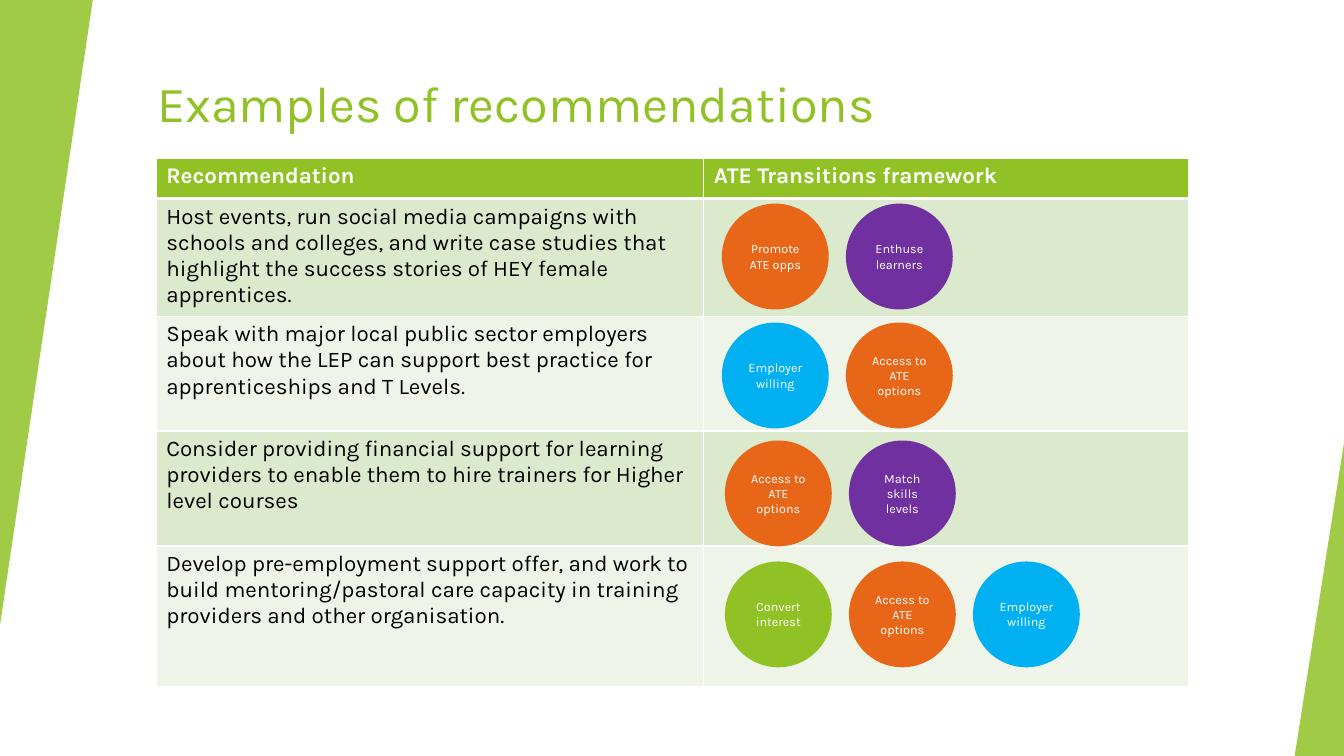
"""Build the slide of example recommendations mapped to the ATE Transitions framework."""
from pptx import Presentation
from pptx.dml.color import RGBColor
from pptx.enum import shapes, text
from pptx.oxml import parse_xml
from pptx.oxml.ns import nsdecls
from pptx.util import Inches, Pt

GREEN = RGBColor(0x90, 0xC2, 0x26)
ORANGE = RGBColor(0xE7, 0x66, 0x18)
PURPLE = RGBColor(0x70, 0x30, 0xA0)
BLUE = RGBColor(0x00, 0xB0, 0xF0)
WHITE = RGBColor(0xFF, 0xFF, 0xFF)
BLACK = RGBColor(0x00, 0x00, 0x00)
BANDS = [RGBColor(0xDB, 0xE9, 0xCD), RGBColor(0xEE, 0xF4, 0xE8)]

PROMOTE = ("Promote ATE opps", ORANGE)
ENTHUSE = ("Enthuse learners", PURPLE)
WILLING = ("Employer willing", BLUE)
ACCESS = ("Access to ATE options", ORANGE)
MATCH = ("Match skills levels", PURPLE)
CONVERT = ("Convert interest", GREEN)

headings = ["Recommendation", "ATE Transitions framework"]
recommendations = [
    ("Host events, run social media campaigns with schools and colleges, and write case studies "
     "that highlight the success stories of HEY female apprentices.",
     1.14, 7.16, 2.02, [PROMOTE, ENTHUSE]),
    ("Speak with major local public sector employers about how the LEP can support best practice "
     "for apprenticeships and T Levels.",
     1.14, 7.16, 3.2, [WILLING, ACCESS]),
    ("Consider providing financial support for learning providers to enable them to hire trainers "
     "for Higher level courses",
     1.14, 7.19, 4.37, [ACCESS, MATCH]),
    ("Develop pre-employment support offer, and work to build mentoring/pastoral care capacity in "
     "training providers and other organisation.",
     1.4, 7.19, 5.57, [CONVERT, ACCESS, WILLING]),
]


def add_filled(preset, left, top, width, height, color):
    shape = slide.shapes.add_shape(preset, Inches(left), Inches(top), Inches(width), Inches(height))
    shape.shadow.inherit = False
    shape.fill.solid()
    shape.fill.fore_color.rgb = color
    shape.line.fill.background()
    return shape


def style_runs(paragraph, size, color, bold=False):
    for run in paragraph.runs:
        run.font.name = "Karla"
        run.font.size = Pt(size)
        run.font.color.rgb = color
        run.font.bold = bold


deck = Presentation()
deck.slide_width, deck.slide_height = Inches(13.33), Inches(7.5)
slide = deck.slides.add_slide(deck.slide_layouts[6])

title = slide.shapes.add_textbox(Inches(1.46), Inches(0.67), Inches(9.4), Inches(0.8)).text_frame
title.word_wrap = True
title.text = "Examples of recommendations"
style_runs(title.paragraphs[0], 36, GREEN)

for left, top, width, height, turn in [(0, 0, 0.92, 6.2, 180), (12.84, 4.39, 0.49, 3.11, 0)]:
    wedge = add_filled(shapes.MSO_SHAPE.ISOSCELES_TRIANGLE, left, top, width, height, GREEN)
    wedge.adjustments[0] = 1
    wedge.rotation = turn
    wedge_color = wedge.fill._xPr.solidFill[0]
    wedge_color.append(parse_xml(f'<a:alpha {nsdecls("a")} val="85000"/>'))

row_heights = [0.4] + [row[1] for row in recommendations]
table = slide.shapes.add_table(len(row_heights), 2, Inches(1.55), Inches(1.57),
                               Inches(10.24), Inches(sum(row_heights))).table
for column, width in zip(table.columns, [5.43, 4.81]):
    column.width = Inches(width)
for row, height in zip(table.rows, row_heights):
    row.height = Inches(height)

cell_texts = [headings] + [[row[0], ""] for row in recommendations]
for r, row_texts in enumerate(cell_texts):
    for c, wording in enumerate(row_texts):
        cell = table.cell(r, c)
        cell.text = wording
        style_runs(cell.text_frame.paragraphs[0], 16, BLACK if r else WHITE, r == 0)
        for side in "LRTB":
            points = 3 if (r, side) in [(0, "B"), (1, "T")] else 1
            cell._tc.get_or_add_tcPr().append(parse_xml(
                f'<a:ln{side} {nsdecls("a")} w="{Pt(points)}"><a:solidFill>'
                f'<a:srgbClr val="{WHITE}"/></a:solidFill></a:ln{side}>'))
        cell.fill.solid()
        cell.fill.fore_color.rgb = BANDS[(r - 1) % 2] if r else GREEN

for _, _, first_left, top, stages in recommendations:
    for position, (label, color) in enumerate(stages):
        stage = add_filled(shapes.MSO_SHAPE.OVAL, first_left + 1.23 * position, top, 1.06, 1.05, color)
        stage.text_frame.text = label
        stage.text_frame.word_wrap = True
        stage.text_frame.vertical_anchor = text.MSO_ANCHOR.MIDDLE
        stage.text_frame.paragraphs[0].alignment = text.PP_ALIGN.CENTER
        style_runs(stage.text_frame.paragraphs[0], 9, WHITE)

deck.save("out.pptx")
